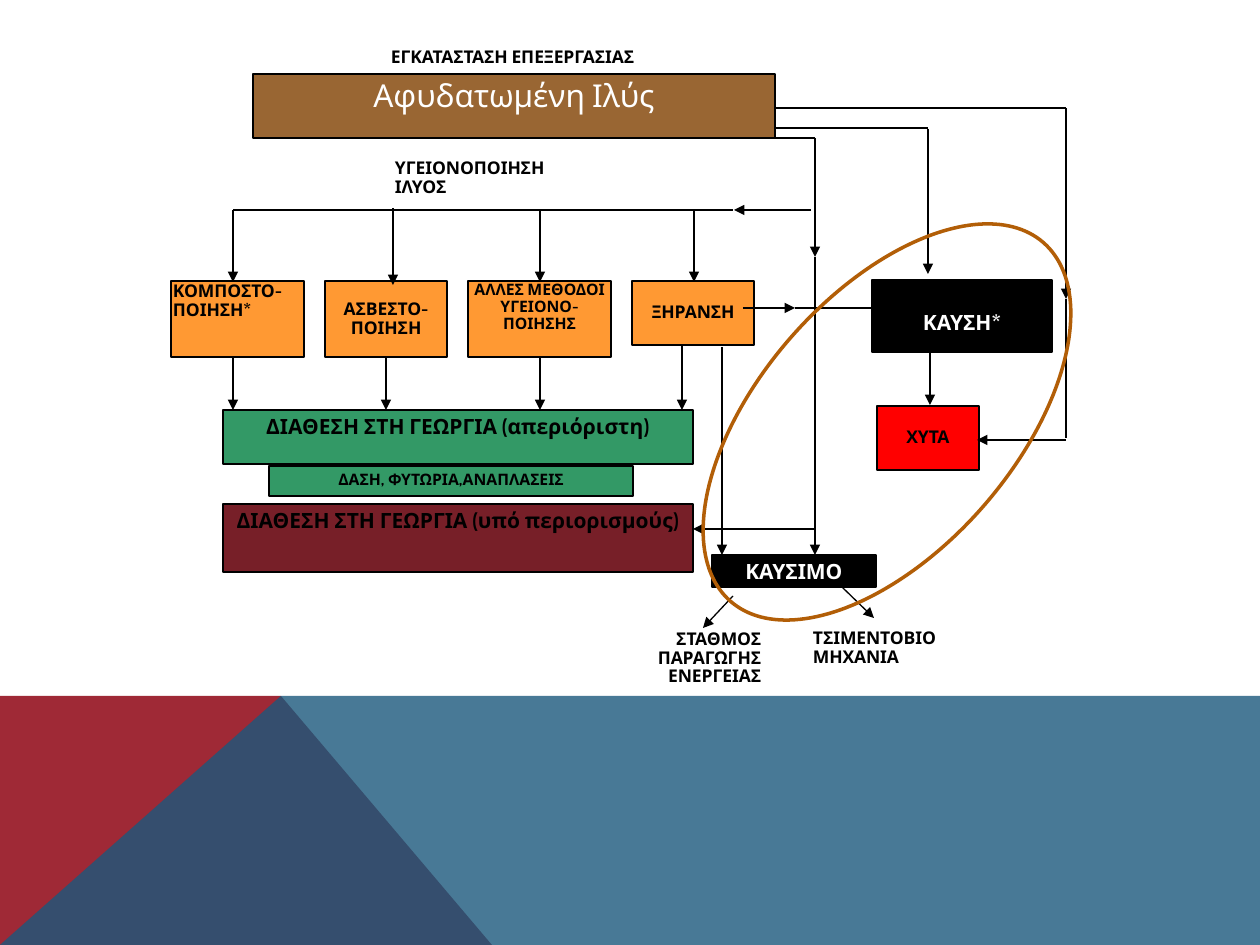
from lxml import etree
from pptx import Presentation
from pptx.dml.color import RGBColor
from pptx.enum.shapes import MSO_CONNECTOR, MSO_SHAPE
from pptx.enum.text import MSO_ANCHOR, PP_ALIGN
from pptx.oxml.ns import qn
from pptx.util import Pt

PX = 914400 / 126  # EMU in one px
RECTANGLE, ELLIPSE = MSO_SHAPE.RECTANGLE, MSO_SHAPE.OVAL
STRAIGHT = MSO_CONNECTOR.STRAIGHT
TOP, MIDDLE = MSO_ANCHOR.TOP, MSO_ANCHOR.MIDDLE
LEFT, CENTER, RIGHT = PP_ALIGN.LEFT, PP_ALIGN.CENTER, PP_ALIGN.RIGHT
FONT = "Cabin"
BLACK, WHITE = "000000", "FFFFFF"
ORANGE, GREEN = "FF9933", "339966"
WIDE, TIGHT = (8, 6), (2, 1)  # side and top insets


def color(value):
    return RGBColor.from_string(value)


def write(shape, text, size, text_color, bold, align, anchor, insets):
    frame = shape.text_frame
    frame.word_wrap = True
    frame.vertical_anchor = anchor
    side, top = (round(inset * PX) for inset in insets)
    frame.margin_left = frame.margin_right = side
    frame.margin_top, frame.margin_bottom = top, min(top, round(6 * PX))
    paragraph = frame.paragraphs[0]
    paragraph.alignment = align
    paragraph.line_spacing = 0.9
    run = paragraph.add_run()
    run.text = text
    run.font.name = FONT
    run.font.size = Pt(size)
    run.font.bold = bold
    run.font.color.rgb = color(text_color)


presentation = Presentation()
presentation.slide_width = round(1260 * PX)
presentation.slide_height = round(945 * PX)
slide = presentation.slides.add_slide(presentation.slide_layouts[6])
shapes = slide.shapes

# Background wedges: points, fill, opacity in percent
wedges = [
    ([(0, 945), (0, 696), (281, 696), (492, 945)], "9F2936", 100),
    ([(0, 945), (281, 696), (1260, 696), (1260, 945)], "1B587C", 80),
]
for points, fill, opacity in wedges:
    builder = shapes.build_freeform(*points[0], scale=PX)
    builder.add_line_segments(points[1:], close=True)
    wedge = builder.convert_to_shape()
    wedge.shadow.inherit = False
    wedge.fill.solid()
    wedge.fill.fore_color.rgb = color(fill)
    wedge.line.fill.background()
    if opacity < 100:
        fill_color = wedge._element.spPr.find(qn("a:solidFill"))[0]
        etree.SubElement(fill_color, qn("a:alpha"), val=str(opacity * 1000))

# Process boxes: left, top, width, height, fill, text, size, text colour, bold, align, anchor, insets
boxes = [
    (253, 74, 522, 64, "996633", "Αφυδατωμένη Ιλύς", 18, WHITE, False, CENTER, TOP, WIDE),
    (872, 280, 180, 72, BLACK, "ΚΑΥΣΗ*", 12, WHITE, True, CENTER, TOP, (8, 32)),
    (877, 406, 102, 64, "FF0000", "ΧΥΤΑ", 10, BLACK, True, CENTER, MIDDLE, WIDE),
    (171, 281, 133, 76, ORANGE, "ΚΟΜΠΟΣΤΟ-ΠΟΙΗΣΗ*", 10, BLACK, True, LEFT, TOP, TIGHT),
    (325, 281, 122, 76, ORANGE, "ΑΣΒΕΣΤΟ-ΠΟΙΗΣΗ", 10, BLACK, True, CENTER, MIDDLE, TIGHT),
    (468, 281, 143, 76, ORANGE, "ΑΛΛΕΣ ΜΕΘΟΔΟΙ ΥΓΕΙΟΝΟ-ΠΟΙΗΣΗΣ", 9, BLACK, True, CENTER, TOP, TIGHT),
    (632, 281, 122, 64, ORANGE, "ΞΗΡΑΝΣΗ", 10, BLACK, True, CENTER, MIDDLE, WIDE),
    (223, 410, 470, 54, GREEN, "ΔΙΑΘΕΣΗ ΣΤΗ ΓΕΩΡΓΙΑ (απεριόριστη)", 12, BLACK, True, CENTER, TOP, WIDE),
    (269, 466, 364, 30, GREEN, "ΔΑΣΗ, ΦΥΤΩΡΙΑ,ΑΝΑΠΛΑΣΕΙΣ", 9, BLACK, True, CENTER, TOP, WIDE),
    (223, 504, 470, 68, "771F28", "ΔΙΑΘΕΣΗ ΣΤΗ ΓΕΩΡΓΙΑ (υπό περιορισμούς)", 12, BLACK, True, CENTER, TOP, WIDE),
    (712, 555, 164, 32, BLACK, "ΚΑΥΣΙΜΟ", 12, WHITE, True, CENTER, TOP, WIDE),
]
for left, top, width, height, fill, *text_style in boxes:
    box = shapes.add_shape(RECTANGLE, *(round(n * PX) for n in (left, top, width, height)))
    box.shadow.inherit = False
    box.fill.solid()
    box.fill.fore_color.rgb = color(fill)
    box.line.color.rgb = color(BLACK)
    box.line.width = Pt(0.75)
    write(box, *text_style)

# Free labels: left, top, width, height, text, align, insets
labels = [
    (360, 48, 305, 26, "ΕΓΚΑΤΑΣΤΑΣΗ ΕΠΕΞΕΡΓΑΣΙΑΣ", CENTER, (2, 0)),
    (393, 158, 192, 26, "ΥΓΕΙΟΝΟΠΟΙΗΣΗ ΙΛΥΟΣ", LEFT, TIGHT),
    (811, 628, 141, 26, "ΤΣΙΜΕΝΤΟΒΙΟΜΗΧΑΝΙΑ", LEFT, TIGHT),
    (602, 630, 161, 52, "ΣΤΑΘΜΟΣ ΠΑΡΑΓΩΓΗΣ ΕΝΕΡΓΕΙΑΣ", RIGHT, (2, 0)),
]
for left, top, width, height, text, align, insets in labels:
    label = shapes.add_textbox(*(round(n * PX) for n in (left, top, width, height)))
    write(label, text, 10, BLACK, True, align, TOP, insets)

# Flow lines: x and y of the start, then of the end
plain_lines = [
    (775, 108, 1066, 108), (775, 128, 928, 128), (775, 138, 815, 138),
    (795, 308, 872, 308), (1066, 299, 1066, 438), (815, 257, 815, 440),
    (733, 210, 233, 210),
]
arrows = [
    # from the sludge to the right-hand routes
    (928, 129, 928, 274), (1066, 108, 1066, 299), (815, 138, 815, 257),
    (930, 352, 930, 405), (1066, 440, 977, 440),
    # drying and fuel
    (743, 308, 795, 308), (722, 347, 722, 555), (815, 438, 815, 555),
    (814, 529, 693, 529), (733, 596, 703, 628), (842, 587, 874, 618),
    # sanitation branch
    (811, 210, 734, 210), (393, 208, 393, 285), (682, 345, 682, 410),
]
arrows += [(x, 210, x, 282) for x in (233, 540, 694)]
arrows += [(x, 357, x, 410) for x in (233, 386, 540)]
for ends, has_head in [(e, False) for e in plain_lines] + [(e, True) for e in arrows]:
    connector = shapes.add_connector(STRAIGHT, *(round(n * PX) for n in ends))
    connector.line.color.rgb = color(BLACK)
    connector.line.width = Pt(0.75)
    if has_head:
        etree.SubElement(connector.line._get_or_add_ln(), qn("a:tailEnd"), type="triangle")
    etree.SubElement(connector._element.spPr, qn("a:effectLst"))

# Ellipse around the thermal routes
ellipse = shapes.add_shape(ELLIPSE, *(round(n * PX) for n in (759, 184, 256, 476)))
ellipse.shadow.inherit = False
ellipse.rotation = 41.1
ellipse.fill.background()
ellipse.line.color.rgb = color("B25E07")
ellipse.line.width = Pt(2)

presentation.save("out.pptx")
